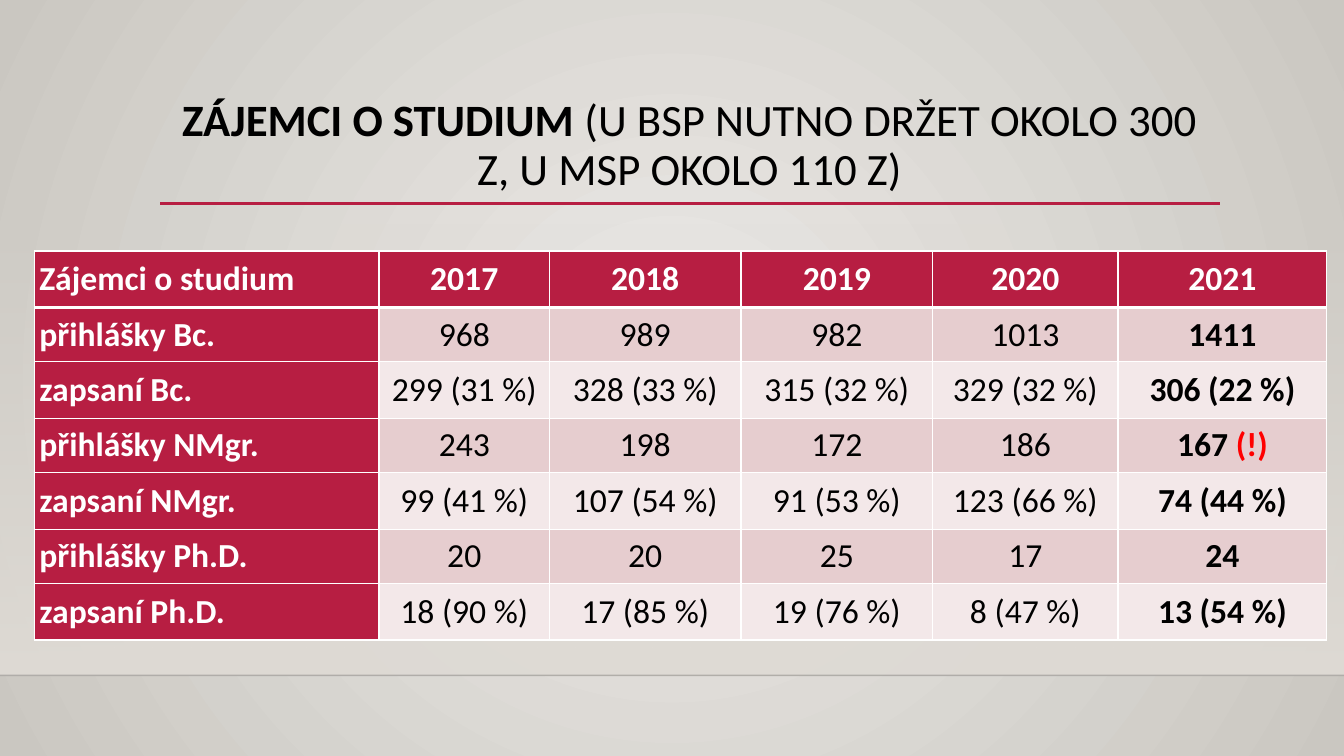
from lxml import etree
from pptx import Presentation
from pptx.dml.color import RGBColor
from pptx.enum import shapes, text
from pptx.oxml.ns import qn
from pptx.util import Inches, Pt

TITLE = [("ZÁJEMCI O STUDIUM ", True),
         ("(U BSP NUTNO DRŽET OKOLO 300 Z, U MSP OKOLO 110 Z)", False)]
WARNING = "(!)"
APPLICANTS = [
    ["Zájemci o studium", "2017", "2018", "2019", "2020", "2021"],
    ["přihlášky Bc.", "968", "989", "982", "1013", "1411"],
    ["zapsaní Bc.", "299 (31 %)", "328 (33 %)", "315 (32 %)", "329 (32 %)", "306 (22 %)"],
    ["přihlášky NMgr.", "243", "198", "172", "186", "167 " + WARNING],
    ["zapsaní NMgr.", "99 (41 %)", "107 (54 %)", "91 (53 %)", "123 (66 %)", "74 (44 %)"],
    ["přihlášky Ph.D.", "20", "20", "25", "17", "24"],
    ["zapsaní Ph.D.", "18 (90 %)", "17 (85 %)", "19 (76 %)", "8 (47 %)", "13 (54 %)"],
]
COLUMN_WIDTHS = [3.42, 1.69, 1.9, 1.9, 1.84, 2.07]
ROW_HEIGHTS = [0.56, 0.54]  # alternating
COLORS = {
    "light": "ECEAE7", "dark": "CAC7C1", "wall": "DFDBD5", "floor": "000001",
    "crimson": "B71E42", "band_dark": "E6CDCF", "band_light": "F3E8E9",
    "white": "FFFFFF", "black": "000000", "warning": "FF0000",
}
FONT = "Calibri"


def rgb(name):
    return RGBColor.from_string(COLORS[name])


def set_alpha(color_element, percent):
    etree.SubElement(color_element, qn("a:alpha")).set("val", str(percent * 1000))


def set_gradient(fill, first, last):
    fill.gradient()
    for stop, name in zip(fill.gradient_stops, (first, last)):
        stop.color.rgb = rgb(name)


def add_rule(slide, left, right, y, color, width):
    rule = slide.shapes.add_connector(
        shapes.MSO_CONNECTOR.STRAIGHT, Inches(left), Inches(y), Inches(right), Inches(y))
    rule.line.color.rgb = rgb(color)
    rule.line.width = Pt(width)
    etree.SubElement(rule.element.spPr, qn("a:effectLst"))
    return rule


def set_borders(cell, widths):
    properties = cell._tc.get_or_add_tcPr()
    for place, (side, width) in enumerate(widths.items()):
        border = etree.Element(qn("a:ln" + side), w=str(Pt(width)))
        solid = etree.SubElement(border, qn("a:solidFill"))
        etree.SubElement(solid, qn("a:srgbClr"), val=COLORS["white"])
        properties.insert(place, border)


def fill_cell(cell, row, column, content):
    heading = row == 0 or column == 0
    band = "band_dark" if row % 2 else "band_light"
    cell.fill.solid()
    cell.fill.fore_color.rgb = rgb("crimson" if heading else band)
    cell.vertical_anchor = text.MSO_ANCHOR.MIDDLE
    cell.margin_left = cell.margin_right = Inches(0.05)
    cell.margin_top = cell.margin_bottom = 0
    set_borders(cell, {"L": 1, "R": 1, "T": 3 if row == 1 else 1, "B": 3 if row == 0 else 1})

    paragraph = cell.text_frame.paragraphs[0]
    paragraph.alignment = text.PP_ALIGN.CENTER if column else text.PP_ALIGN.JUSTIFY
    paragraph.font.name = FONT
    paragraph.font.size = Pt(24)
    paragraph.font.bold = heading or column == len(COLUMN_WIDTHS) - 1
    paragraph.font.color.rgb = rgb("white" if heading else "black")
    value, mark, _ = content.partition(WARNING)
    paragraph.add_run().text = value
    if mark:
        warning = paragraph.add_run()
        warning.text = mark
        warning.font.color.rgb = rgb("warning")


def main():
    prs = Presentation()
    prs.slide_width, prs.slide_height = Inches(13.33), Inches(7.5)
    slide = prs.slides.add_slide(prs.slide_layouts[6])

    # Background glow
    set_gradient(slide.background.fill, "light", "dark")
    glow = slide.element.find(".//" + qn("a:gradFill"))
    glow.remove(glow.find(qn("a:lin")))
    circle = etree.SubElement(glow, qn("a:path"))
    circle.set("path", "circle")
    etree.SubElement(circle, qn("a:fillToRect"), l="50000", t="50000", r="50000", b="50000")

    # Wall fading in from the top, with the floor line under it
    wall = slide.shapes.add_shape(
        shapes.MSO_SHAPE.RECTANGLE, 0, Inches(2.21), prs.slide_width, Inches(4.49))
    wall.shadow.inherit = False
    wall.line.fill.background()
    set_gradient(wall.fill, "wall", "wall")
    wall.fill.gradient_angle = 270
    set_alpha(wall.element.spPr.find(".//" + qn("a:srgbClr")), 0)
    floor = add_rule(slide, 0, 13.33, 6.7, "floor", 1)
    set_alpha(floor.element.spPr.find(".//" + qn("a:srgbClr")), 20)

    # Title and its rule
    add_rule(slide, 1.59, 12.1, 2.02, "crimson", 2.5)
    title = slide.shapes.add_textbox(Inches(1.59), Inches(0.88), Inches(10.5), Inches(1.15))
    title.text_frame.word_wrap = True
    title.text_frame.vertical_anchor = text.MSO_ANCHOR.MIDDLE
    heading = title.text_frame.paragraphs[0]
    heading.alignment = text.PP_ALIGN.CENTER
    heading.line_spacing = 0.9
    heading.font.name = FONT
    heading.font.size = Pt(32)
    heading.font.color.rgb = rgb("black")
    for words, bold in TITLE:
        run = heading.add_run()
        run.text = words
        run.font.bold = bold

    # Applicants table
    heights = [ROW_HEIGHTS[row % 2] for row in range(len(APPLICANTS))]
    table = slide.shapes.add_table(
        len(APPLICANTS), len(COLUMN_WIDTHS), Inches(0.34), Inches(2.49),
        Inches(sum(COLUMN_WIDTHS)), Inches(sum(heights))).table
    for column, width in zip(table.columns, COLUMN_WIDTHS):
        column.width = Inches(width)
    for row, (height, contents) in enumerate(zip(heights, APPLICANTS)):
        table.rows[row].height = Inches(height)
        for column, content in enumerate(contents):
            fill_cell(table.cell(row, column), row, column, content)

    prs.save("out.pptx")


if __name__ == "__main__":
    main()
